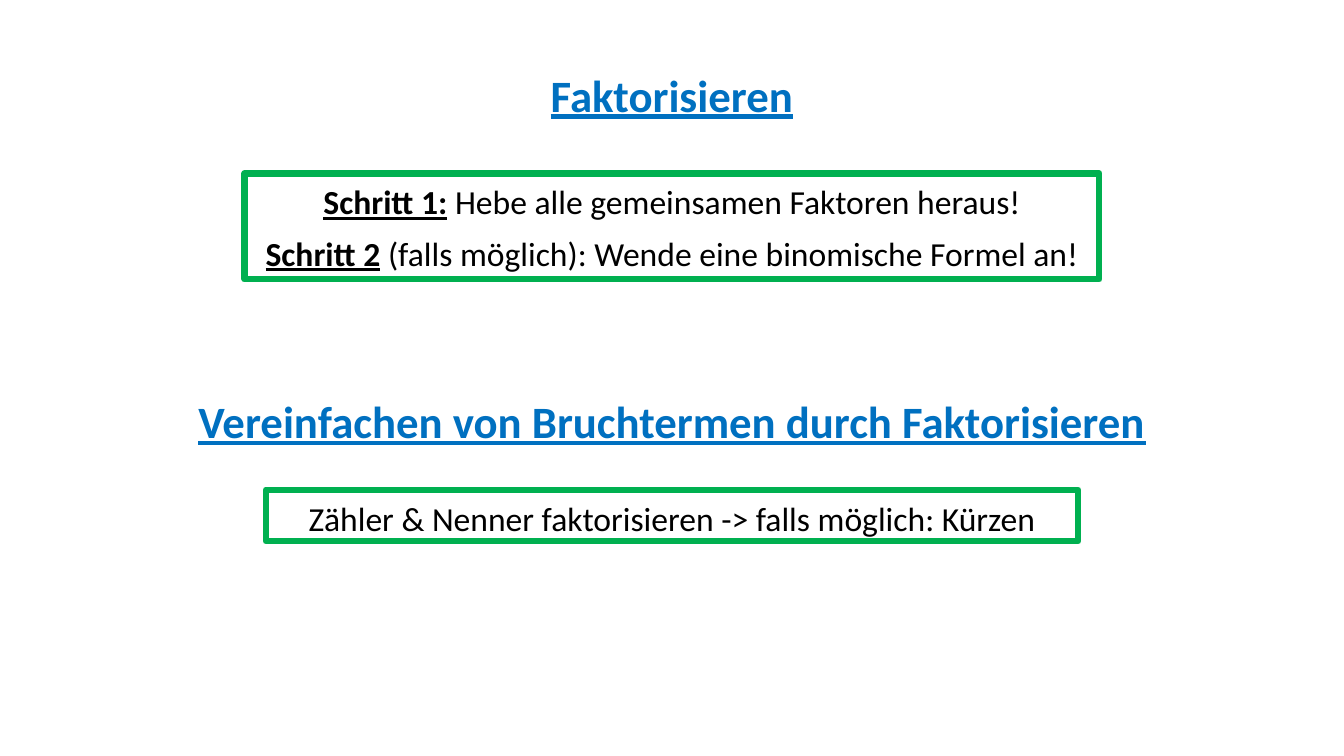
from dataclasses import dataclass

from pptx import Presentation
from pptx import util as u
from pptx.dml.color import RGBColor
from pptx.enum import shapes, text
from pptx.slide import Slide
from pptx.text.text import TextFrame

SLIDE_WIDTH, SLIDE_HEIGHT = 33.87, 19.05
HEADING_WIDTH, HEADING_HEIGHT = 32.16, 1.63
COLORS = {"heading": "0070C0", "frame": "00B050", "body": "000000"}


@dataclass(frozen=True)
class Line:
    """One line of text, opening with an emphasised (bold, underlined) part."""
    emphasis: str
    rest: str = ""
    spacing: float = 1.0
    after: float = 0


@dataclass(frozen=True)
class Section:
    heading: str
    heading_top: float
    rule_top: float
    rule_width: float
    rule_height: float
    rules: tuple[Line, ...]


SECTIONS = (
    Section("Faktorisieren", 1.57, 4.37, 21.54, 2.67, (
        Line("Schritt 1:", " Hebe alle gemeinsamen Faktoren heraus!", 1.07, 8),
        Line("Schritt 2", " (falls möglich): Wende eine binomische Formel an!"),
    )),
    Section("Vereinfachen von Bruchtermen durch Faktorisieren", 9.8, 12.34, 20.47, 1.3, (
        Line("", "Zähler & Nenner faktorisieren -> falls möglich: Kürzen", 1.07, 8),
    )),
)


def centred_box(top: float, width: float, height: float) -> tuple[u.Length, ...]:
    return u.Cm((SLIDE_WIDTH - width) / 2), u.Cm(top), u.Cm(width), u.Cm(height)


def write_lines(frame: TextFrame, lines: tuple[Line, ...], size: int, color: str) -> None:
    frame.word_wrap = True
    frame.vertical_anchor = text.MSO_ANCHOR.TOP
    for index, line in enumerate(lines):
        paragraph = frame.add_paragraph() if index else frame.paragraphs[0]
        paragraph.alignment = text.PP_ALIGN.CENTER
        paragraph.line_spacing = line.spacing
        paragraph.space_after = u.Pt(line.after)
        for part, emphasised in ((line.emphasis, True), (line.rest, False)):
            if not part:
                continue
            run = paragraph.add_run()
            run.text = part
            run.font.name = "Calibri"
            run.font.size = u.Pt(size)
            run.font.bold = run.font.underline = emphasised
            run.font.color.rgb = RGBColor.from_string(COLORS[color])


def draw_section(slide: Slide, section: Section) -> None:
    heading = slide.shapes.add_textbox(
        *centred_box(section.heading_top, HEADING_WIDTH, HEADING_HEIGHT))
    write_lines(heading.text_frame, (Line(section.heading),), 32, "heading")

    rule = slide.shapes.add_shape(
        shapes.MSO_SHAPE.RECTANGLE,
        *centred_box(section.rule_top, section.rule_width, section.rule_height))
    rule.shadow.inherit = False
    rule.fill.background()
    rule.line.color.rgb = RGBColor.from_string(COLORS["frame"])
    rule.line.width = u.Pt(4.5)
    write_lines(rule.text_frame, section.rules, 24, "body")


def main() -> None:
    deck = Presentation()
    deck.slide_width, deck.slide_height = u.Cm(SLIDE_WIDTH), u.Cm(SLIDE_HEIGHT)
    slide = deck.slides.add_slide(deck.slide_layouts[6])
    for section in SECTIONS:
        draw_section(slide, section)
    deck.save("out.pptx")


if __name__ == "__main__":
    main()
